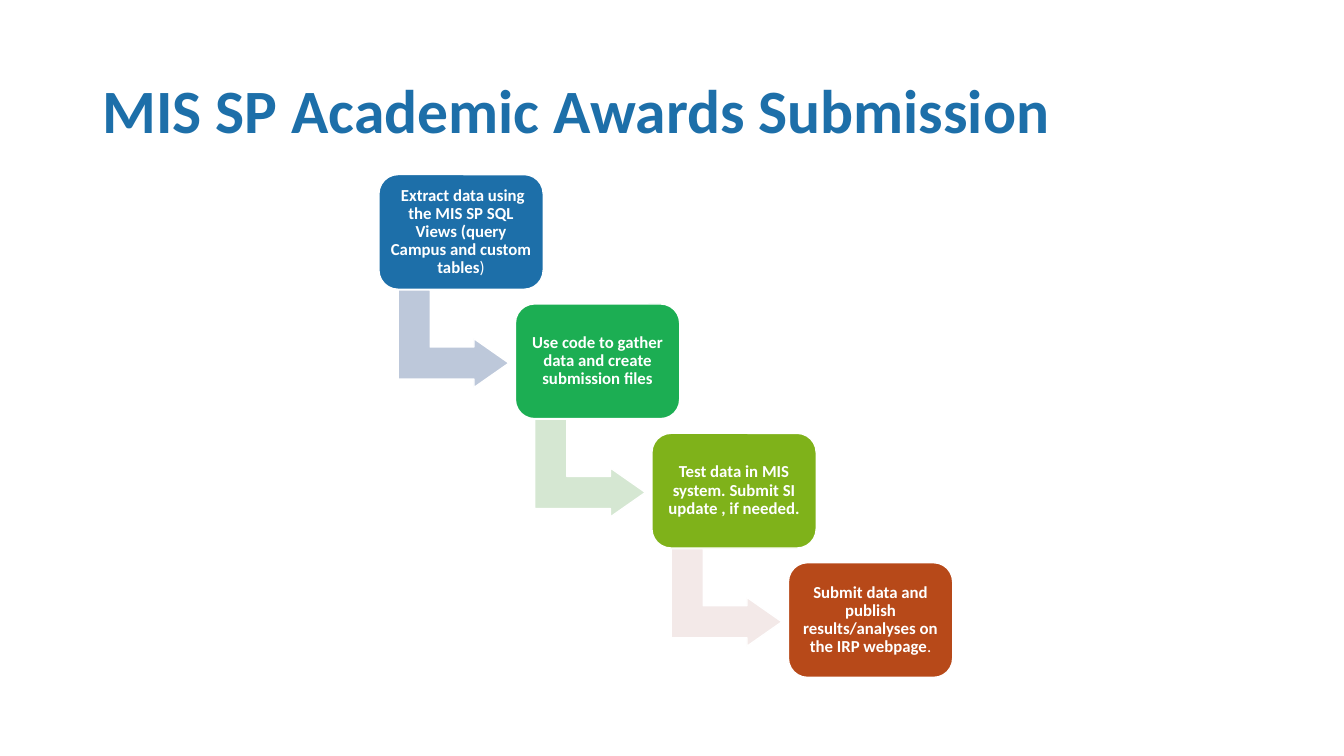
import pptx
import pptx.util
import pptx.dml.color
import pptx.enum.shapes
import pptx.enum.text

Cm = pptx.util.Cm
RGBColor = pptx.dml.color.RGBColor
MSO_SHAPE = pptx.enum.shapes.MSO_SHAPE

WHITE = RGBColor(0xFF, 0xFF, 0xFF)
BLUE = RGBColor(0x1D, 0x6F, 0xA9)
GREEN = RGBColor(0x1C, 0xAE, 0x53)
LIME = RGBColor(0x7F, 0xB2, 0x1A)
RUST = RGBColor(0xB7, 0x49, 0x19)
PALE_BLUE = RGBColor(0xBD, 0xC8, 0xDA)
PALE_GREEN = RGBColor(0xD5, 0xE7, 0xD2)
PALE_ROSE = RGBColor(0xF3, 0xE9, 0xE8)

STEPS = [
    (" Extract data using the MIS SP SQL Views (query Campus and custom tables", ")", BLUE, PALE_BLUE),
    ("Use code to gather data and create submission files", "", GREEN, PALE_GREEN),
    ("Test data in MIS system. Submit SI update , if needed.", "", LIME, PALE_ROSE),
    ("Submit data and publish results/analyses on the IRP webpage", ".", RUST, None),
]
FIRST_LEFT, FIRST_TOP = 9.55, 4.4
STEP_RIGHT, STEP_DOWN = 3.44, 3.26


def set_font(para, size, color):
    para.font.name = "Calibri"
    para.font.size = pptx.util.Pt(size)
    para.font.bold = True
    para.font.color.rgb = color
    para.line_spacing = 0.9


def add_title(page, text):
    box = page.shapes.add_textbox(Cm(2.33), Cm(1.02), Cm(29.2), Cm(3.68))
    frame = box.text_frame
    frame.word_wrap = True
    frame.vertical_anchor = pptx.enum.text.MSO_ANCHOR.MIDDLE
    para = frame.paragraphs[0]
    para.text = text
    set_font(para, 44, BLUE)


def add_filled_shape(page, kind, left, top, width, height, color):
    shape = page.shapes.add_shape(kind, Cm(left), Cm(top), Cm(width), Cm(height))
    shape.shadow.inherit = False
    shape.fill.solid()
    shape.fill.fore_color.rgb = color
    shape.line.color.rgb = WHITE
    shape.line.width = pptx.util.Pt(1)
    return shape


def add_arrow(page, left, top, color):
    arrow = add_filled_shape(page, MSO_SHAPE.BENT_UP_ARROW, left, top, 2.46, 2.79, color)
    arrow.rotation = 90
    for index, value in enumerate((0.328, 0.25, 0.358)):
        arrow.adjustments[index] = value


def add_step(page, left, top, text, ending, color):
    box = add_filled_shape(page, MSO_SHAPE.ROUNDED_RECTANGLE, left, top, 4.14, 2.89, color)
    frame = box.text_frame
    frame.word_wrap = True
    frame.vertical_anchor = pptx.enum.text.MSO_ANCHOR.MIDDLE
    frame.margin_left = frame.margin_right = Cm(0.13)
    frame.margin_top = frame.margin_bottom = Cm(0.13)
    para = frame.paragraphs[0]
    para.alignment = pptx.enum.text.PP_ALIGN.CENTER
    set_font(para, 12, WHITE)
    para.add_run().text = text
    if ending:
        span = para.add_run()
        span.text = ending
        span.font.bold = False


def main():
    deck = pptx.Presentation()
    deck.slide_width, deck.slide_height = Cm(33.87), Cm(19.05)
    page = deck.slides.add_slide(deck.slide_layouts[6])
    add_title(page, "MIS SP Academic Awards Submission")
    for index, (text, ending, color, arrow_color) in enumerate(STEPS):
        left = FIRST_LEFT + index * STEP_RIGHT
        top = FIRST_TOP + index * STEP_DOWN
        if arrow_color:
            add_arrow(page, left + 0.65, top + 2.74, arrow_color)
        add_step(page, left, top, text, ending, color)
    deck.save("out.pptx")


if __name__ == "__main__":
    main()
